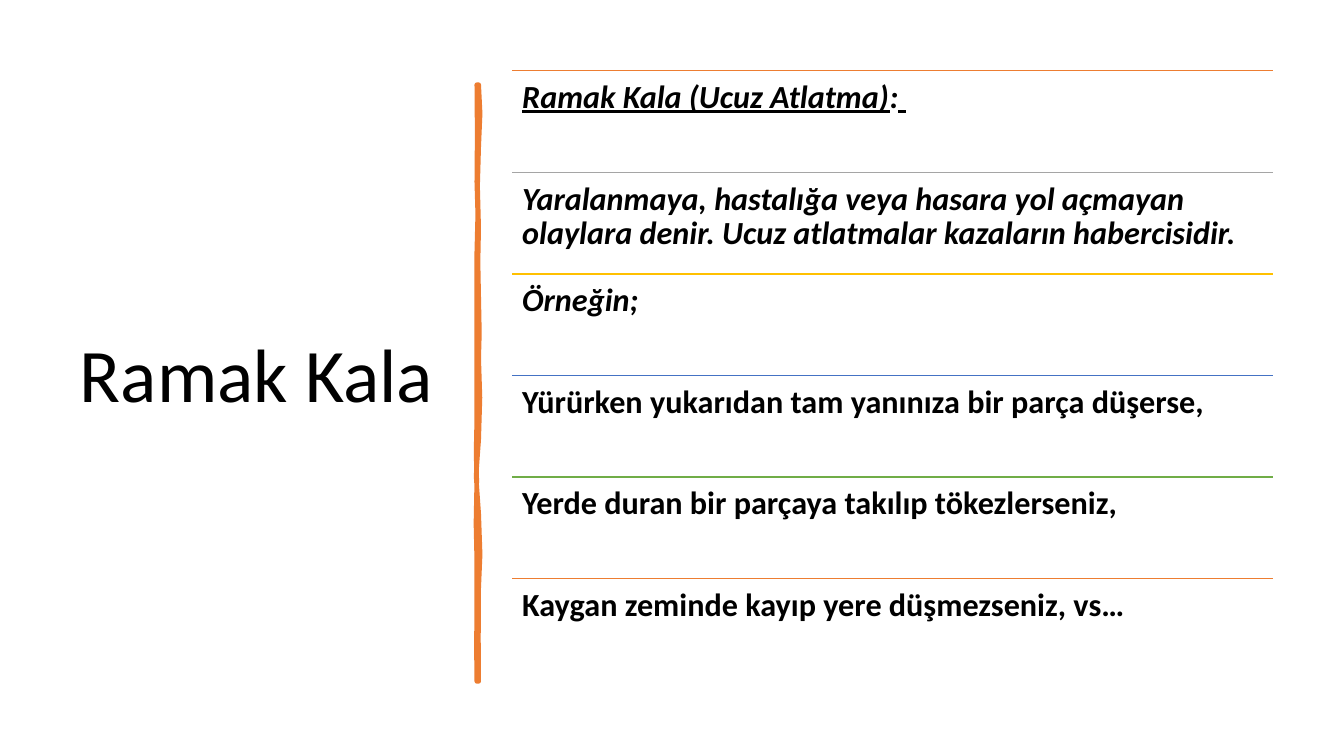
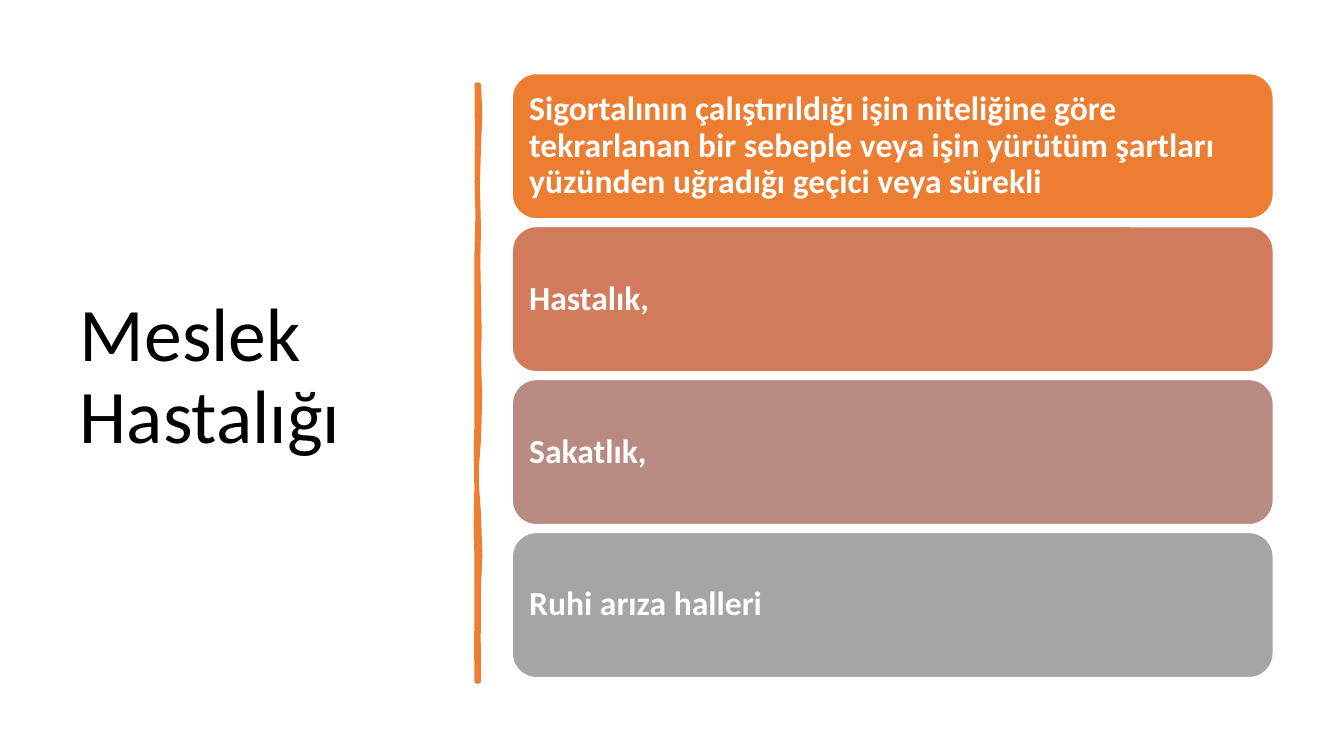
from dataclasses import dataclass

from pptx import Presentation
from pptx.dml.color import RGBColor
from pptx.enum.shapes import MSO_CONNECTOR, MSO_SHAPE
from pptx.enum.text import MSO_ANCHOR, PP_ALIGN
from pptx.oxml.ns import qn
from pptx.util import Pt

STRAIGHT = MSO_CONNECTOR.STRAIGHT
ROUNDED = MSO_SHAPE.ROUNDED_RECTANGLE
TOP, MIDDLE = MSO_ANCHOR.TOP, MSO_ANCHOR.MIDDLE
LEFT = PP_ALIGN.LEFT


@dataclass(frozen=True)
class Theme:
    font: str = "Calibri"
    black: str = "000000"
    white: str = "FFFFFF"
    orange: str = "ED7D31"
    gray: str = "A5A5A5"
    gold: str = "FFC000"
    blue: str = "4472C4"
    green: str = "70AD47"
    clay: str = "D17B5C"
    rose: str = "B98A82"
    title_size: float = 54
    row_size: float = 23
    card_size: float = 24


THEME = Theme()
PANEL_LEFT, PANEL_WIDTH = 365.9, 543.6
ROW_TOP, ROW_HEIGHT = 50.5, 72.55
CARD_TOP, CARD_HEIGHT, CARD_PITCH = 52.6, 103.7, 109.25

BRUSH_POINTS = [
    (342, 60.5), (343, 81), (342, 105), (341.2, 133), (342, 163), (341.5, 187),
    (342, 212), (342.5, 238), (342, 256), (342.9, 284), (342, 314), (340.1, 340),
    (342, 367), (343, 396), (342, 420), (341.8, 456), (342, 486.7),
    (340.6, 486.7), (340.3, 459), (340.6, 441), (340.6, 401), (340, 374),
    (340.6, 343), (340.1, 323), (340.6, 299), (340.6, 241), (340.5, 209),
    (340.6, 180), (341.3, 153), (340.6, 130), (340.9, 96), (340.6, 60.5),
]
UNITS_PER_POINT = 100


def write_text(shape, spans, size, color, anchor, inset):
    frame = shape.text_frame
    frame_format = {
        "word_wrap": True,
        "vertical_anchor": anchor,
        "margin_left": Pt(7.2),
        "margin_right": Pt(7.2),
        "margin_top": Pt(inset),
        "margin_bottom": Pt(inset),
    }
    for name, value in frame_format.items():
        setattr(frame, name, value)
    para = frame.paragraphs[0]
    para.alignment = LEFT
    para.line_spacing = 0.9
    for text, style in spans:
        span = para.add_run()
        span.text = text
        span.font.color.rgb = RGBColor.from_string(color)
        for name, value in {"name": THEME.font, "size": Pt(size), **style}.items():
            setattr(span.font, name, value)


def add_titled_page(deck, title):
    page = deck.slides.add_slide(deck.slide_layouts[6])
    box = page.shapes.add_textbox(Pt(50), Pt(50.2), Pt(269.3), Pt(439.9))
    write_text(box, [(title, {})], THEME.title_size, THEME.black, MIDDLE, 3.6)

    outline = [(x * UNITS_PER_POINT, y * UNITS_PER_POINT) for x, y in BRUSH_POINTS]
    builder = page.shapes.build_freeform(*outline[0], scale=Pt(1) / UNITS_PER_POINT)
    builder.add_line_segments(outline[1:], close=True)
    brush = builder.convert_to_shape()
    brush.shadow.inherit = False
    brush.fill.solid()
    brush.fill.fore_color.rgb = RGBColor.from_string(THEME.orange)
    brush.line.color.rgb = RGBColor.from_string(THEME.orange)
    brush.line.width = Pt(3.25)
    return page


deck = Presentation()
deck.slide_width, deck.slide_height = Pt(960), Pt(540)

bold = {"bold": True}
slanted = {"bold": True, "italic": True}
underlined = {**slanted, "underline": True}
rows = [
    (THEME.orange, [("Ramak Kala (Ucuz Atlatma)", underlined), (":", slanted), (" ", underlined)]),
    (THEME.gray, [("Yaralanmaya, hastalığa veya hasara yol açmayan olaylara denir. "
                   "Ucuz atlatmalar kazaların habercisidir.", slanted)]),
    (THEME.gold, [("Örneğin;", slanted)]),
    (THEME.blue, [("Yürürken yukarıdan tam yanınıza bir parça düşerse,", bold)]),
    (THEME.green, [("Yerde duran bir parçaya takılıp tökezlerseniz,", bold)]),
    (THEME.orange, [("Kaygan zeminde kayıp yere düşmezseniz, vs…", bold)]),
]
page = add_titled_page(deck, "Ramak Kala")
for index, (color, spans) in enumerate(rows):
    top = Pt(ROW_TOP + index * ROW_HEIGHT)
    rule = page.shapes.add_connector(
        STRAIGHT, Pt(PANEL_LEFT), top, Pt(PANEL_LEFT + PANEL_WIDTH), top
    )
    rule.line.color.rgb = RGBColor.from_string(color)
    rule.line.width = Pt(1)
    properties = rule._element.spPr
    properties.append(properties.makeelement(qn("a:effectLst"), {}))
    box = page.shapes.add_textbox(Pt(PANEL_LEFT), top, Pt(PANEL_WIDTH), Pt(ROW_HEIGHT))
    write_text(box, spans, THEME.row_size, THEME.black, TOP, 7.2)

cards = [
    (THEME.orange, "Sigortalının çalıştırıldığı işin niteliğine göre tekrarlanan bir sebeple "
                   "veya işin yürütüm şartları yüzünden uğradığı geçici veya sürekli"),
    (THEME.clay, "Hastalık,"),
    (THEME.rose, "Sakatlık,"),
    (THEME.gray, "Ruhi arıza halleri"),
]
page = add_titled_page(deck, "Meslek Hastalığı")
for index, (color, text) in enumerate(cards):
    card = page.shapes.add_shape(
        ROUNDED, Pt(PANEL_LEFT), Pt(CARD_TOP + index * CARD_PITCH), Pt(PANEL_WIDTH), Pt(CARD_HEIGHT)
    )
    card.shadow.inherit = False
    card.fill.solid()
    card.fill.fore_color.rgb = RGBColor.from_string(color)
    card.line.color.rgb = RGBColor.from_string(THEME.white)
    card.line.width = Pt(1)
    write_text(card, [(text, bold)], THEME.card_size, THEME.white, MIDDLE, 7.2)

deck.save("out.pptx")
